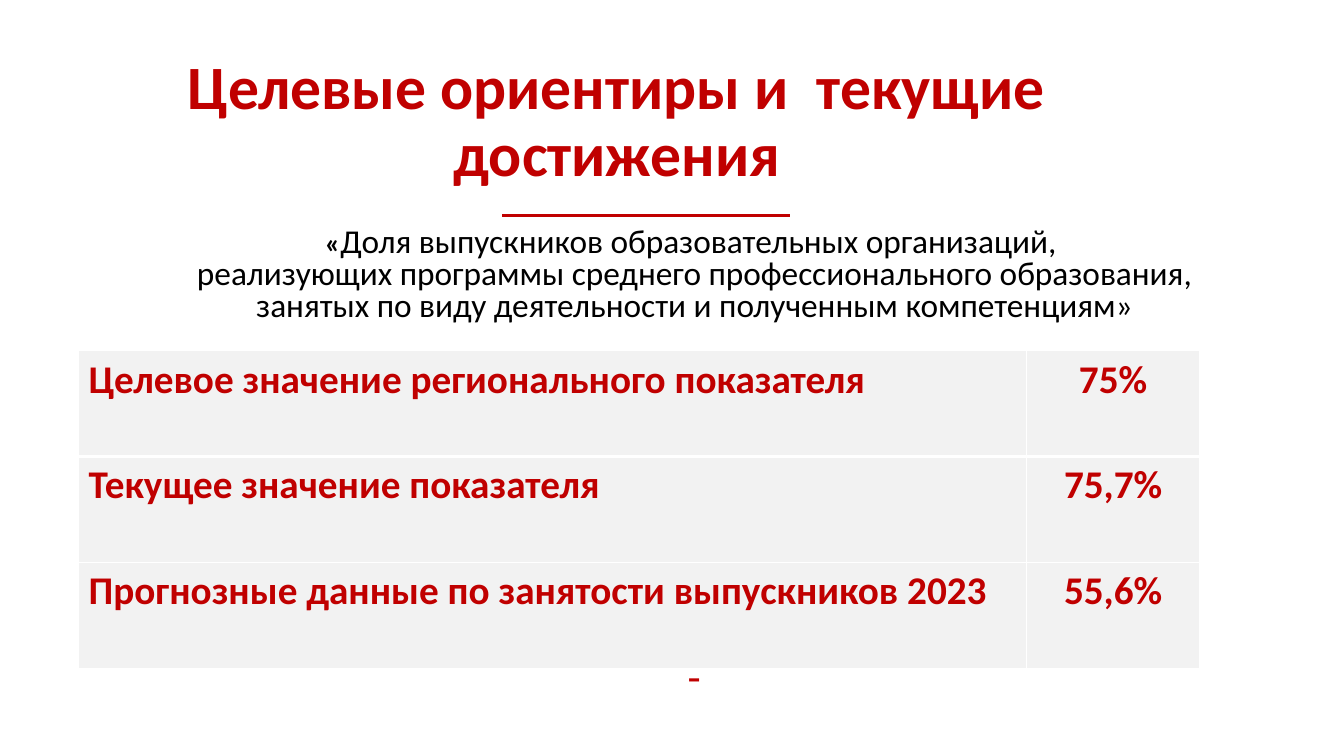
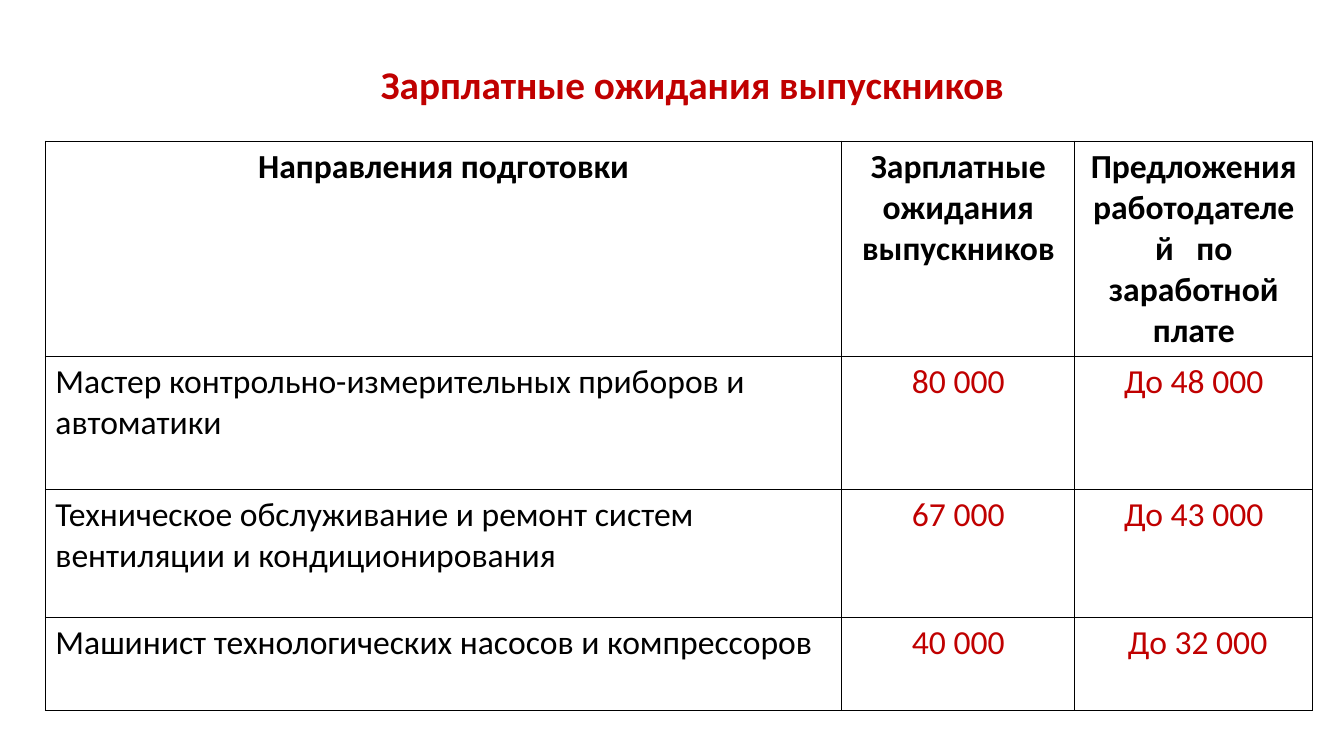
import pptx
import pptx.util
import pptx.dml.color
import pptx.enum.shapes
import pptx.enum.text
import pptx.oxml.ns
from lxml import etree

PX = 9144  # 100 px to the inch
FONT = "Calibri"
RED = pptx.dml.color.RGBColor(0xC0, 0x00, 0x00)
BLACK = pptx.dml.color.RGBColor(0x00, 0x00, 0x00)
WHITE = pptx.dml.color.RGBColor(0xFF, 0xFF, 0xFF)
GREY = pptx.dml.color.RGBColor(0xF2, 0xF2, 0xF2)
LEFT = pptx.enum.text.PP_ALIGN.LEFT
CENTER = pptx.enum.text.PP_ALIGN.CENTER
MIDDLE = pptx.enum.text.MSO_ANCHOR.MIDDLE
TOP = pptx.enum.text.MSO_ANCHOR.TOP


def add_text(page, place, lines, size, color, bold, spacing, anchor=TOP):
    """Add a centred text box with one paragraph for each line."""
    box = page.shapes.add_textbox(*[length * PX for length in place])
    frame = box.text_frame
    frame.word_wrap = True
    frame.vertical_anchor = anchor
    frame.text = "\n".join(lines)
    for para in frame.paragraphs:
        para.alignment = CENTER
        para.line_spacing = spacing
        para.font.name = FONT
        para.font.size = pptx.util.Pt(size)
        para.font.bold = bold
        para.font.color.rgb = color
    return frame


def add_grid(page, left, top, widths, heights, rows, size, style, border, fill=None):
    """Add a table; style(row, column) gives text colour and boldness,
    border(row, side) gives line colour and width."""
    table = page.shapes.add_table(
        len(rows), len(widths), left * PX, top * PX,
        sum(widths) * PX, sum(heights) * PX).table
    table.first_row = table.horz_banding = False
    for column, width in zip(table.columns, widths):
        column.width = width * PX
    for row_index, (row, height) in enumerate(zip(rows, heights)):
        table.rows[row_index].height = height * PX
        for column_index, text in enumerate(row):
            cell = table.cell(row_index, column_index)
            cell.text = text
            color, bold = style(row_index, column_index)
            para = cell.text_frame.paragraphs[0]
            header = fill is None and row_index == 0
            para.alignment = CENTER if column_index or header else LEFT
            para.font.name = FONT
            para.font.size = pptx.util.Pt(size)
            para.font.bold = bold
            para.font.color.rgb = color
            properties = cell._tc.get_or_add_tcPr()
            for side in "LRTB":
                line_color, width = border(row_index, side)
                line = etree.SubElement(
                    properties, pptx.oxml.ns.qn(f"a:ln{side}"), w=str(pptx.util.Pt(width)))
                solid = etree.SubElement(line, pptx.oxml.ns.qn("a:solidFill"))
                etree.SubElement(solid, pptx.oxml.ns.qn("a:srgbClr"), val=str(line_color))
            if fill is None:
                cell.fill.background()
            else:
                cell.fill.solid()
                cell.fill.fore_color.rgb = fill


deck = pptx.Presentation()
deck.slide_width = pptx.util.Inches(13.33)
deck.slide_height = pptx.util.Inches(7.5)
blank = deck.slide_layouts[6]
title_style = dict(color=RED, bold=True, spacing=0.9, anchor=MIDDLE)

# Targets and current results
page = deck.slides.add_slide(blank)
add_text(page, (23, 56, 1178, 132), ["Целевые ориентиры и  текущие достижения"],
         44, **title_style)

rule = page.shapes.add_connector(
    pptx.enum.shapes.MSO_CONNECTOR.STRAIGHT, 498 * PX, 214 * PX, 784 * PX, 214 * PX)
rule.line.color.rgb = RED
rule.line.width = pptx.util.Pt(2.25)
etree.SubElement(rule._element.spPr, pptx.oxml.ns.qn("a:effectLst"))

indicator = add_text(page, (129, 221, 1119, 115), [
    "",
    "реализующих программы среднего профессионального образования, "
    "занятых по виду деятельности и полученным компетенциям»",
], 23.8, BLACK, False, 0.8)
opening = indicator.paragraphs[0]
quote = opening.add_run()
quote.text = "«"
quote.font.size = pptx.util.Pt(20.6)
quote.font.bold = True
span = opening.add_run()
span.text = "Доля выпускников образовательных организаций, "

add_grid(page, 78, 348, [940, 172], [105] * 3, [
    ["Целевое значение регионального показателя", "75%"],
    ["Текущее значение показателя", "75,7%"],
    ["Прогнозные данные по занятости выпускников 2023", "55,6%"],
], 28,
    style=lambda row, column: (RED, True),
    border=lambda row, side: (WHITE, 3 if (row, side) in [(0, "B"), (1, "T")] else 1),
    fill=GREY)
add_text(page, (129, 640, 1119, 62), ["-"], 30.6, RED, False, 1.0)

# Salary expectations
page = deck.slides.add_slide(blank)
add_text(page, (92, 33, 1189, 107), ["Зарплатные ожидания выпускников"],
         28, **title_style)
add_grid(page, 45, 140, [790, 231, 236], [214, 132, 127, 92], [
    ["Направления подготовки", "Зарплатные ожидания выпускников",
     "Предложения работодателей   по заработной плате"],
    ["Мастер контрольно-измерительных приборов и автоматики", "80 000", "До 48 000"],
    ["Техническое обслуживание и ремонт систем вентиляции и кондиционирования",
     "67 000", "До 43 000"],
    ["Машинист технологических насосов и компрессоров", "40 000", " До 32 000"],
], 24,
    style=lambda row, column: (RED if row and column else BLACK, row == 0),
    border=lambda row, side: (BLACK, 1))

deck.save("out.pptx")
